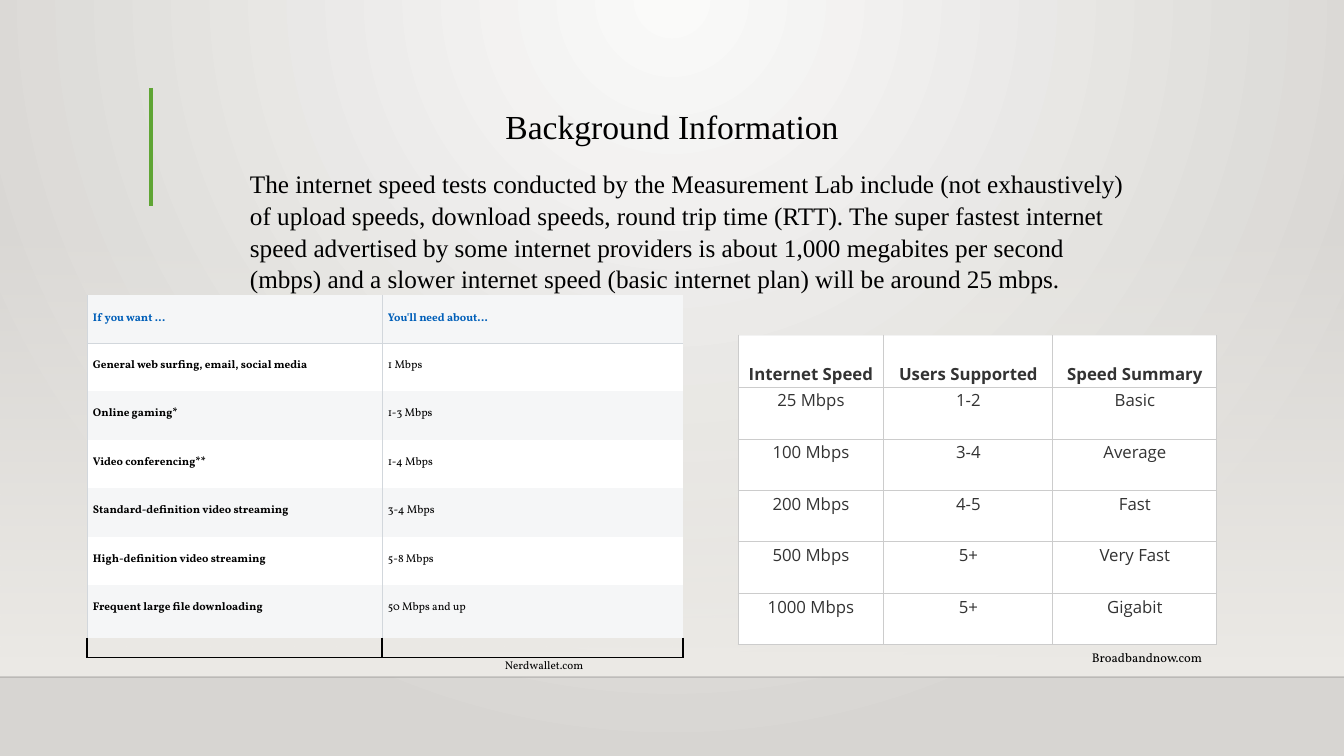
import pptx
import pptx.util
import pptx.dml.color
import pptx.enum.shapes
import pptx.enum.text
import pptx.oxml
import pptx.oxml.ns

PX = 914400 / 100.8
COLORS = {
    "black": "000000", "green": "5FA534", "glow": "FAFAF9", "edge": "D7D5D2",
    "band": "EDEBE7", "floor": "000001", "blue": "005FB9", "stripe": "F5F6F7",
    "white": "FFFFFF", "rule": "D2D7DC", "grid": "CCCCCC", "grid_top": "F3F3F3",
    "ink": "333333",
}
SERIF, VOLLKORN, SANS = "Times New Roman", "Vollkorn", "Open Sans"
ALIGN = pptx.enum.text.PP_ALIGN
ANCHOR = pptx.enum.text.MSO_ANCHOR
NO_STYLE = "{2D5ABB26-0587-4C30-8999-92F81FD0307C}"

SUMMARY = (
    "The internet speed tests conducted by the Measurement Lab include (not exhaustively) "
    "of upload speeds, download speeds, round trip time (RTT). The super fastest internet "
    "speed advertised by some internet providers is about 1,000 megabites per second (mbps) "
    "and a slower internet speed (basic internet plan) will be around 25 mbps."
)
NEEDS = [
    ("If you want ...", "You'll need about..."),
    ("General web surfing, email, social media", "1 Mbps"),
    ("Online gaming*", "1-3 Mbps"),
    ("Video conferencing**", "1-4 Mbps"),
    ("Standard-definition video streaming", "3-4 Mbps"),
    ("High-definition video streaming", "5-8 Mbps"),
    ("Frequent large file downloading", "50 Mbps and up"),
    ("", ""),
]
SPEEDS = [
    ("Internet Speed", "Users Supported", "Speed Summary"),
    ("25 Mbps", "1-2", "Basic"),
    ("100 Mbps", "3-4", "Average"),
    ("200 Mbps", "4-5", "Fast"),
    ("500 Mbps", "5+", "Very Fast"),
    ("1000 Mbps", "5+", "Gigabit"),
]


def px(n):
    return pptx.util.Emu(round(n * PX))


def rgb(name):
    return pptx.dml.color.RGBColor.from_string(COLORS[name])


def sub(parent, tag, **attrs):
    el = parent.makeelement(pptx.oxml.ns.qn(tag), attrs)
    parent.append(el)
    return el


def find(element, tag):
    return element.find(".//" + pptx.oxml.ns.qn(tag))


def set_text(tf, text, font, size, color="black", bold=False, align=ALIGN.LEFT):
    tf.text = text
    p = tf.paragraphs[0]
    p.alignment = align
    for r in p.runs:
        r.font.name, r.font.size, r.font.bold = font, pptx.util.Pt(size), bold
        r.font.color.rgb = rgb(color)
    return p


def add_text(s, box, text, font, size, wrap=True, **style):
    tf = s.shapes.add_textbox(*map(px, box)).text_frame
    tf.word_wrap = wrap
    return tf, set_text(tf, text, font, size, **style)


def add_line(s, x1, y1, x2, y2, color, width):
    line = s.shapes.add_connector(
        pptx.enum.shapes.MSO_CONNECTOR.STRAIGHT, px(x1), px(y1), px(x2), px(y2))
    line.line.color.rgb = rgb(color)
    line.line.width = pptx.util.Pt(width)
    sub(line.element.spPr, "a:effectLst")
    return line


def set_stops(fill, first, last):
    fill.gradient()
    for stop, color in zip(fill.gradient_stops, (first, last)):
        stop.color.rgb = rgb(color)


def draw_backdrop(s, width, height):
    """Radial background, a band fading in downwards, and the floor line."""
    set_stops(s.background.fill, "glow", "edge")
    grad = find(s.element, "a:gradFill")
    grad.remove(find(grad, "a:lin"))
    radial = sub(grad, "a:path", path="circle")
    sub(radial, "a:fillToRect", l="43000", t="0", r="43000", b="100000")

    floor = height - 79
    band = s.shapes.add_shape(
        pptx.enum.shapes.MSO_SHAPE.RECTANGLE, 0, px(222), px(width), px(floor - 222))
    band.shadow.inherit = False
    band.line.fill.background()
    set_stops(band.fill, "band", "band")
    band.fill.gradient_angle = 270
    sub(find(band.element, "a:srgbClr"), "a:alpha", val="0")

    line = add_line(s, 0, floor, width, floor, "floor", 1)
    sub(find(line.element, "a:srgbClr"), "a:alpha", val="20000")


def draw_heading(s, x, y):
    add_line(s, x, y, x, y + 118, "green", 3)
    tf, p = add_text(s, (x + 140, y + 3, 762, 71), "Background Information",
                     SERIF, 24, align=ALIGN.CENTER)
    tf.vertical_anchor = ANCHOR.MIDDLE
    tf.margin_bottom = 0
    p.line_spacing = 0.9
    tf, p = add_text(s, (x + 89, y + 74, 905, 132), SUMMARY, SERIF, 18)
    p.line_spacing = 1.05


def add_table(s, x, y, cols, rows):
    frame = s.shapes.add_table(len(rows), len(cols), px(x), px(y), px(sum(cols)), px(sum(rows)))
    table = frame.table
    table.first_row = table.horz_banding = False
    find(frame.element, "a:tableStyleId").text = NO_STYLE
    for sizes, parts, side in ((cols, table.columns, "width"), (rows, table.rows, "height")):
        for size, part in zip(sizes, parts):
            setattr(part, side, px(size))
    return table


def format_cell(cell, inset_x, inset_y, borders, fill=None, anchor=ANCHOR.TOP):
    """Borders map a side (L, R, T, B) to a colour name and a width in points."""
    cell.margin_left = cell.margin_right = px(inset_x)
    cell.margin_top = cell.margin_bottom = px(inset_y)
    cell.vertical_anchor = anchor
    tc_pr = find(cell.text_frame._txBody.getparent(), "a:tcPr")
    for side in "LRTB":
        if side in borders:
            color, width = borders[side]
            ln = sub(tc_pr, "a:ln" + side, w=str(pptx.util.Pt(width)))
            sub(sub(ln, "a:solidFill"), "a:srgbClr", val=COLORS[color])
    if fill:
        cell.fill.solid()
        cell.fill.fore_color.rgb = rgb(fill)


def draw_needs_table(s, x, y):
    table = add_table(s, x, y, (295, 301), (48, 48, 49, 48, 49, 48, 53, 20))
    rule, outline = ("rule", 0.75), ("black", 1)
    last = len(NEEDS) - 1
    for i, row in enumerate(NEEDS):
        for j, text in enumerate(row):
            cell = table.cell(i, j)
            p = set_text(cell.text_frame, text, VOLLKORN, 8,
                         color="black" if i else "blue", bold=i == 0 or j == 0)
            if i == last:
                sub(p._p, "a:endParaRPr", sz="800")
                format_cell(cell, 6, 1, dict.fromkeys("LRB", outline))
                continue
            borders = {"L": rule} if i else {"L": rule, "B": rule}
            format_cell(cell, 6, 15, borders, "white" if i % 2 else "stripe",
                        ANCHOR.TOP if i else ANCHOR.MIDDLE)
    add_text(s, (x + 408, y + 358, 102, 24), "Nerdwallet.com", VOLLKORN, 8, wrap=False)


def draw_speeds_table(s, x, y):
    table = add_table(s, x, y, (146, 169, 164), (52, 52, 52, 51, 52, 51))
    for i, row in enumerate(SPEEDS):
        for j, text in enumerate(row):
            cell = table.cell(i, j)
            set_text(cell.text_frame, text, SANS, 12, "ink", i == 0, ALIGN.CENTER)
            borders = dict.fromkeys("LRTB", ("grid", 0.75))
            if i == 0:
                borders["T"] = ("grid_top", 0.75)
            format_cell(cell, 3, 2, borders, "white", ANCHOR.TOP if i else ANCHOR.BOTTOM)
    add_text(s, (x + 344, y + 310, 222, 25), "Broadbandnow.com", VOLLKORN, 9)


def main():
    prs = pptx.Presentation()
    width, height = 1344, 756
    prs.slide_width, prs.slide_height = px(width), px(height)
    s = prs.slides.add_slide(prs.slide_layouts[6])
    draw_backdrop(s, width, height)
    draw_heading(s, 151, 88)
    draw_needs_table(s, 87, 295)
    draw_speeds_table(s, 738, 335)
    prs.save("out.pptx")


if __name__ == "__main__":
    main()
